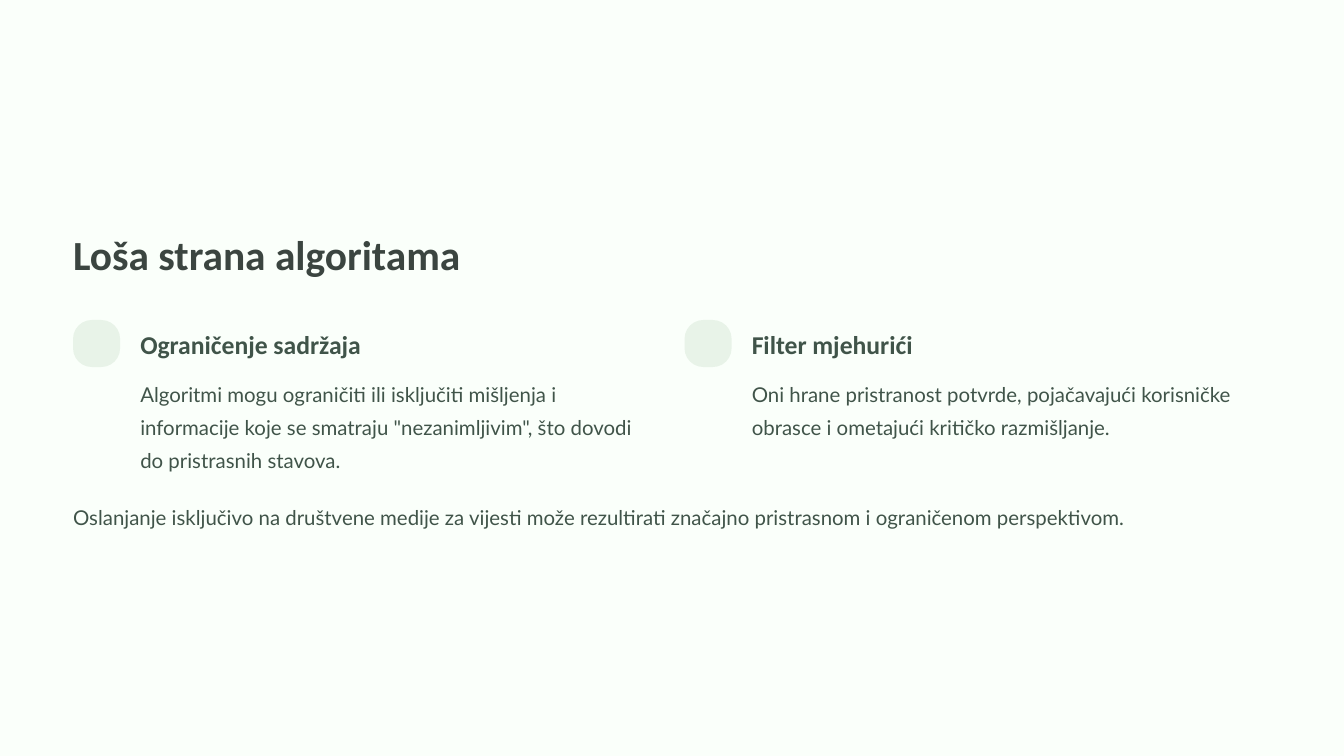
from dataclasses import dataclass

from pptx import Presentation
from pptx.dml.color import RGBColor
from pptx.enum.shapes import MSO_SHAPE
from pptx.enum.text import MSO_ANCHOR, PP_ALIGN
from pptx.util import Inches, Pt

ROUNDED = MSO_SHAPE.ROUNDED_RECTANGLE
TOP = MSO_ANCHOR.TOP
LEFT = PP_ALIGN.LEFT

COLUMNS, ROWS = 16, 9


@dataclass(frozen=True)
class TextStyle:
    font: str
    size: float
    leading: float
    color: str
    bold: bool = False


@dataclass(frozen=True)
class Theme:
    background: str = "FAFFFA"
    badge: str = "E8F3E8"
    title: TextStyle = TextStyle("Calibri", 35.5, 44.5, "3B4540", True)
    heading: TextStyle = TextStyle("Calibri", 22, 27.5, "405449", True)
    body: TextStyle = TextStyle("Lato", 17.5, 28.5, "405449")


def write_text(frame, text, *, style, wrap):
    """Fill a text frame with one formatted paragraph."""
    frame.margin_left = frame.margin_right = 0
    frame.margin_top = frame.margin_bottom = 0
    frame.word_wrap = wrap
    frame.vertical_anchor = TOP
    paragraph = frame.paragraphs[0]
    paragraph.alignment = LEFT
    paragraph.line_spacing = Pt(style.leading)
    run = paragraph.add_run()
    run.text = text
    run.font.name = style.font
    run.font.size = Pt(style.size)
    run.font.bold = style.bold
    run.font.color.rgb = RGBColor.from_string(style.color)


class SlideBuilder:
    """Places elements on a grid of 16 columns and 9 rows."""

    def __init__(self, deck, theme):
        self.theme = theme
        self.column = deck.slide_width / COLUMNS
        self.row = deck.slide_height / ROWS
        self.slide = deck.slides.add_slide(deck.slide_layouts[6])
        fill = self.slide.background.fill
        fill.solid()
        fill.fore_color.rgb = RGBColor.from_string(theme.background)

    def area(self, left, top, width, height):
        return (round(left * self.column), round(top * self.row),
                round(width * self.column), round(height * self.row))

    def text(self, text, *box, style, wrap=False):
        label = self.slide.shapes.add_textbox(*self.area(*box))
        write_text(label.text_frame, text, style=style, wrap=wrap)

    def badge(self, left, top, size):
        badge = self.slide.shapes.add_shape(
            ROUNDED, *self.area(left, top, size, size))
        badge.adjustments[0] = 0.4
        badge.shadow.inherit = False
        badge.fill.solid()
        badge.fill.fore_color.rgb = RGBColor.from_string(self.theme.badge)
        badge.line.fill.background()

    def drawback(self, left, heading, explanation, height):
        text_left = left + 0.8
        self.badge(left, 3.81, 0.56)
        self.text(heading, text_left, 3.9, 3.1, 0.39,
                  style=self.theme.heading)
        self.text(explanation, text_left, 4.44, 6.17, height,
                  style=self.theme.body, wrap=True)


MARGIN = 0.87
DRAWBACK_PITCH = 7.28
DRAWBACKS = [
    ("Ograničenje sadržaja",
     "Algoritmi mogu ograničiti ili isključiti mišljenja i informacije koje "
     "se smatraju \"nezanimljivim\", što dovodi do pristrasnih stavova.",
     1.19),
    ("Filter mjehurići",
     "Oni hrane pristranost potvrde, pojačavajući korisničke obrasce i "
     "ometajući kritičko razmišljanje.",
     0.79),
]
CONCLUSION = ("Oslanjanje isključivo na društvene medije za vijesti može "
              "rezultirati značajno pristrasnom i ograničenom perspektivom.")


def main():
    deck = Presentation()
    deck.slide_width, deck.slide_height = Inches(16), Inches(9)
    theme = Theme()
    page = SlideBuilder(deck, theme)

    # Title
    page.text("Loša strana algoritama", MARGIN, 2.7, 7.18, 0.62,
              style=theme.title)

    # Two drawbacks side by side
    for index, drawback in enumerate(DRAWBACKS):
        page.drawback(MARGIN + index * DRAWBACK_PITCH, *drawback)

    # Conclusion
    page.text(CONCLUSION, MARGIN, 5.91, COLUMNS - 2 * MARGIN, 0.4,
              style=theme.body)

    deck.save("out.pptx")


if __name__ == "__main__":
    main()
